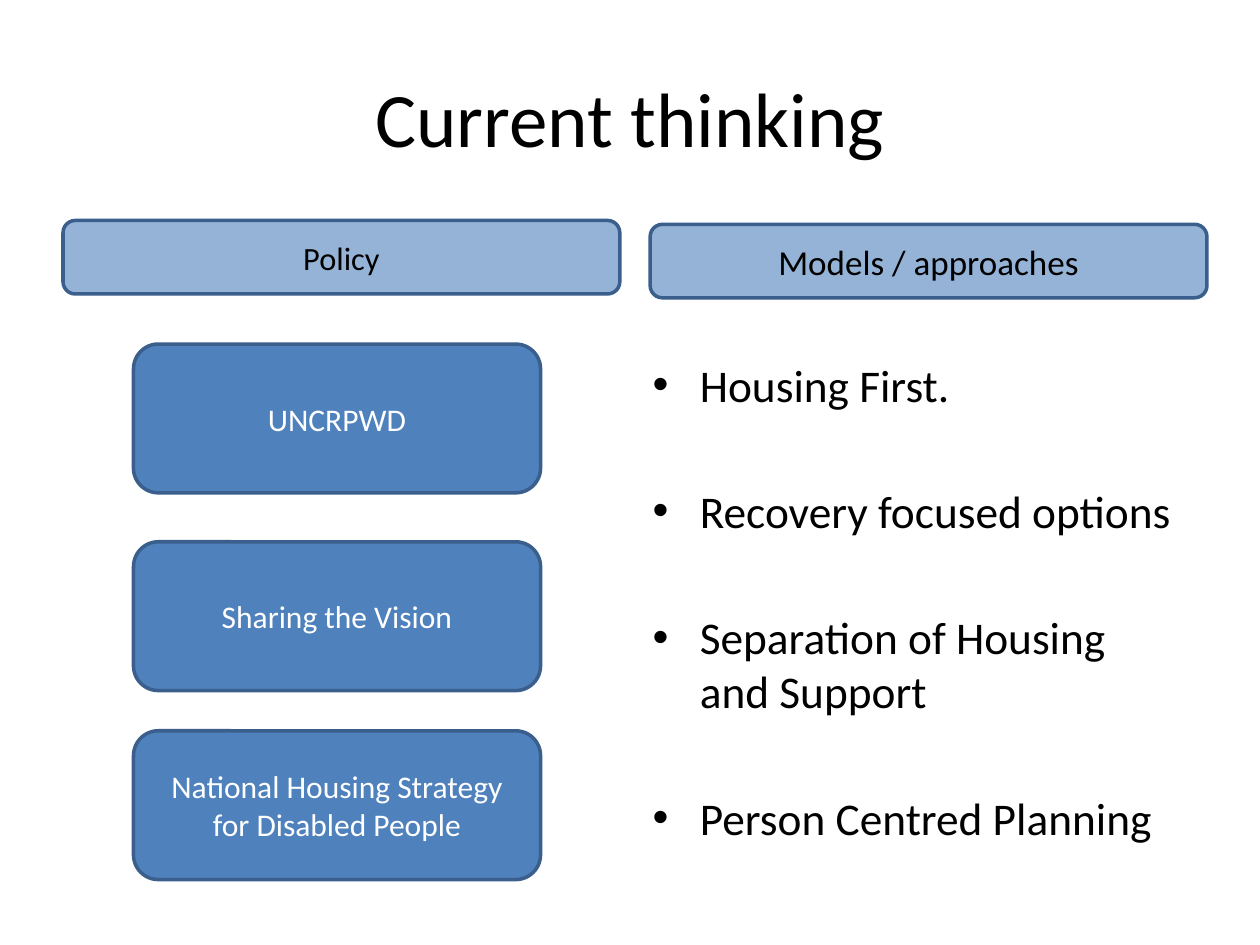
import pptx
import pptx.util
import pptx.dml.color
import pptx.enum.shapes
import pptx.enum.text
import pptx.oxml.ns
import lxml.etree

Pt = pptx.util.Pt
Align = pptx.enum.text.PP_ALIGN
Anchor = pptx.enum.text.MSO_ANCHOR

COLORS = {
    "text": "000000",
    "light_text": "FFFFFF",
    "header": "95B3D7",
    "card": "4F81BD",
    "outline": "3A5F8C",
}
FONT = "Calibri"
POLICIES = [
    (196.6, "UNCRPWD"),
    (309.6, "Sharing the Vision"),
    (417.6, "National Housing Strategy for Disabled People"),
]
MODELS = [
    "Housing First.",
    "Recovery focused options",
    "Separation of Housing and Support",
    "Person Centred Planning",
]


def color(name):
    return pptx.dml.color.RGBColor.from_string(COLORS[name])


def write_text(frame, text, size, fill="text", align=Align.CENTER,
               anchor=Anchor.MIDDLE, bullet=False, space_after=0):
    frame.word_wrap = True
    frame.vertical_anchor = anchor
    lines = [text] if isinstance(text, str) else text
    for index, line in enumerate(lines):
        paragraph = frame.paragraphs[0] if index == 0 else frame.add_paragraph()
        paragraph.alignment = align
        paragraph.space_after = Pt(space_after)
        if bullet:
            add_bullet(paragraph)
        run = paragraph.add_run()
        run.text = line
        run.font.name = FONT
        run.font.size = Pt(size)
        run.font.color.rgb = color(fill)


def add_bullet(paragraph):
    properties = paragraph._p.get_or_add_pPr()
    properties.set("marL", str(Pt(27)))
    properties.set("indent", str(-Pt(27)))
    font = lxml.etree.SubElement(properties, pptx.oxml.ns.qn("a:buFont"))
    font.set("typeface", "Arial")
    character = lxml.etree.SubElement(properties, pptx.oxml.ns.qn("a:buChar"))
    character.set("char", "•")


def add_text_box(slide, box, text, **text_format):
    shape = slide.shapes.add_textbox(*map(Pt, box))
    write_text(shape.text_frame, text, **text_format)


def add_rounded_box(slide, box, text, background, **text_format):
    shape = slide.shapes.add_shape(
        pptx.enum.shapes.MSO_SHAPE.ROUNDED_RECTANGLE, *map(Pt, box))
    shape.shadow.inherit = False
    shape.fill.solid()
    shape.fill.fore_color.rgb = color(background)
    shape.line.color.rgb = color("outline")
    shape.line.width = Pt(2)
    write_text(shape.text_frame, text, **text_format)


def add_policy_column(slide, left, top, width):
    add_rounded_box(slide, (left, top, width, 42), "Policy", "header", size=18.5)
    card_width, card_height = 232.6, 85
    card_left = left + (width - card_width) / 2 - 2.5
    for card_top, policy in POLICIES:
        add_rounded_box(slide, (card_left, card_top, card_width, card_height),
                        policy, "card", size=18, fill="light_text")


def add_models_column(slide, left, top, width):
    add_rounded_box(slide, (left, top, width, 42), "Models / approaches",
                    "header", size=20)
    add_text_box(slide, (left - 5.7, top + 72.2, width, 282), MODELS, size=25.9,
                 align=Align.LEFT, anchor=Anchor.TOP, bullet=True, space_after=41)


def main():
    presentation = pptx.Presentation()
    presentation.slide_width = Pt(720)
    presentation.slide_height = Pt(540)
    slide = presentation.slides.add_slide(presentation.slide_layouts[6])
    add_text_box(slide, (36, 21.6, 648, 90), "Current thinking", size=44)
    add_policy_column(slide, 36, 126, 318.2)
    add_models_column(slide, 371.5, 128.2, 318.2)
    presentation.save("out.pptx")


if __name__ == "__main__":
    main()
